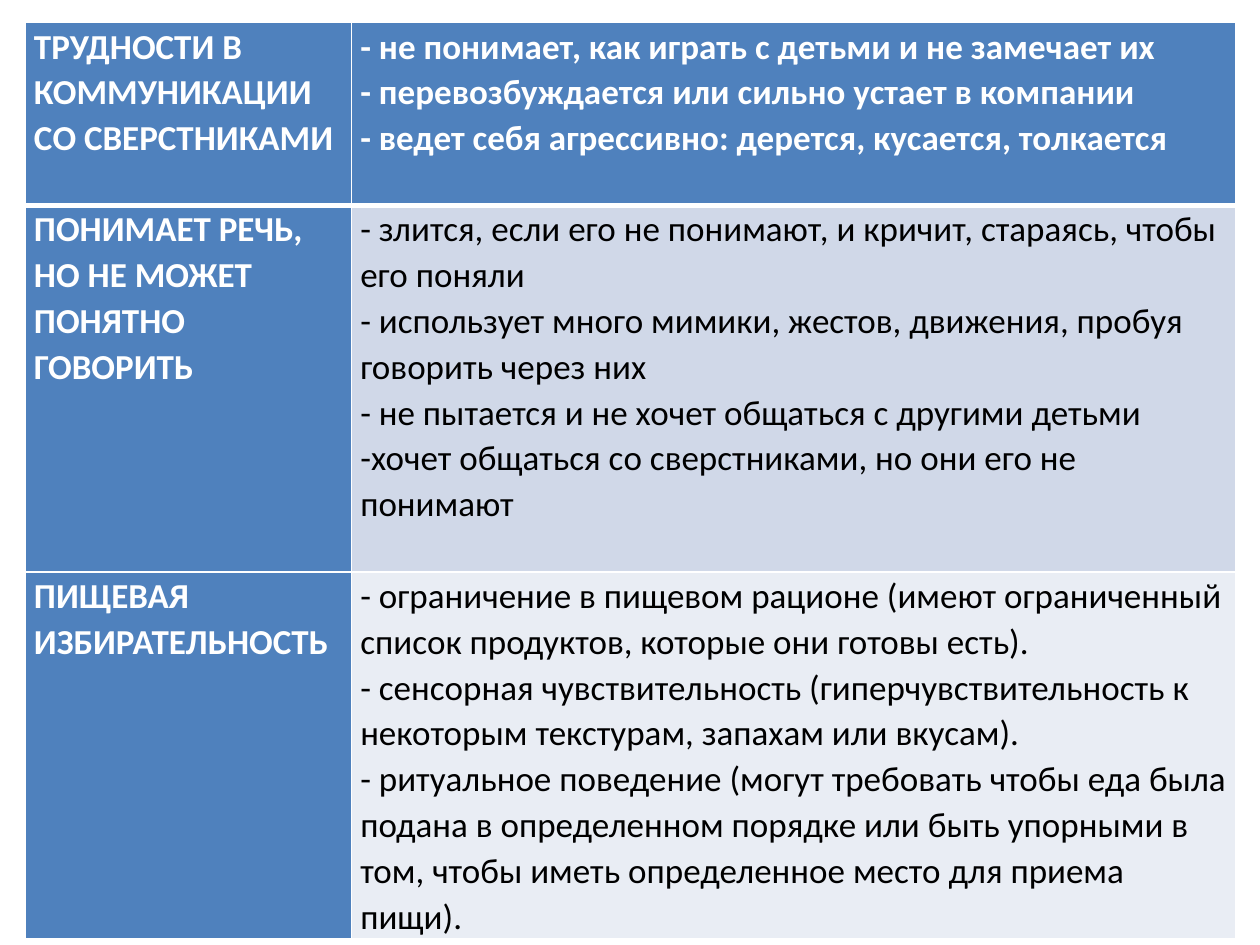
from dataclasses import dataclass

from lxml.etree import SubElement
from pptx import Presentation
from pptx.dml.color import RGBColor
from pptx.oxml.ns import qn
from pptx.util import Inches, Pt


@dataclass(frozen=True)
class Theme:
    font: str = "Calibri"
    size: float = 20
    line_spacing: float = 1.07
    heading_fill: str = "4F81BD"
    heading_text: str = "FFFFFF"
    body_text: str = "000000"
    band_fills: tuple = ("E9EDF4", "D0D8E8")
    border: str = "FFFFFF"
    thin: float = 1
    thick: float = 3


ROWS = [
    (
        1.45,
        "ТРУДНОСТИ В КОММУНИКАЦИИ СО СВЕРСТНИКАМИ",
        [
            "- не понимает, как играть с детьми и не замечает их",
            "- перевозбуждается или сильно устает в компании",
            "- ведет себя агрессивно: дерется, кусается, толкается",
        ],
    ),
    (
        2.91,
        "ПОНИМАЕТ РЕЧЬ, НО НЕ МОЖЕТ ПОНЯТНО ГОВОРИТЬ",
        [
            "- злится, если его не понимают, и кричит, стараясь, чтобы его поняли",
            "- использует много мимики, жестов, движения, пробуя говорить через них",
            "- не пытается и не хочет общаться с другими детьми",
            "-хочет общаться со сверстниками, но они его не понимают",
        ],
    ),
    (
        2.91,
        "ПИЩЕВАЯ ИЗБИРАТЕЛЬНОСТЬ",
        [
            "- ограничение в пищевом рационе (имеют ограниченный список продуктов, которые они готовы есть).",
            "- сенсорная чувствительность (гиперчувствительность к некоторым текстурам, запахам или вкусам).",
            "- ритуальное поведение (могут требовать чтобы еда была подана в определенном порядке или быть "
            "упорными в том, чтобы иметь определенное место для приема пищи).",
        ],
    ),
]
COLUMN_WIDTHS = (2.59, 7.02)


class SlideBuilder:
    def __init__(self, page, theme):
        self.page = page
        self.theme = theme

    def add_table(self, left, top, widths, rows):
        height = sum(row[0] for row in rows)
        frame = self.page.shapes.add_table(
            len(rows), len(widths), Inches(left), Inches(top),
            Inches(sum(widths)), Inches(height),
        )
        table = frame.table
        for column, width in zip(table.columns, widths):
            column.width = Inches(width)
        for index, (row_height, heading, signs) in enumerate(rows):
            table.rows[index].height = Inches(row_height)
            self.fill_cell(table.cell(index, 0), [heading], index, True)
            self.fill_cell(table.cell(index, 1), signs, index, index == 0)

    def fill_cell(self, cell, lines, row_index, is_heading):
        theme = self.theme
        cell.margin_left = cell.margin_right = Inches(0.07)
        cell.margin_top = cell.margin_bottom = 0
        self.set_borders(cell, row_index)
        fill = theme.heading_fill if is_heading else theme.band_fills[row_index % 2]
        cell.fill.solid()
        cell.fill.fore_color.rgb = RGBColor.from_string(fill)
        cell.text_frame.text = "\n".join(lines)
        color = theme.heading_text if is_heading else theme.body_text
        for para in cell.text_frame.paragraphs:
            para.line_spacing = theme.line_spacing
            for span in para.runs:
                span.font.name = theme.font
                span.font.size = Pt(theme.size)
                span.font.bold = is_heading
                span.font.color.rgb = RGBColor.from_string(color)

    def set_borders(self, cell, row_index):
        theme = self.theme
        properties = cell._tc.get_or_add_tcPr()
        thick_side = {0: "lnB", 1: "lnT"}.get(row_index)
        for side in ("lnL", "lnR", "lnT", "lnB"):
            width = theme.thick if side == thick_side else theme.thin
            line = SubElement(properties, qn(f"a:{side}"), w=str(Pt(width)))
            solid = SubElement(line, qn("a:solidFill"))
            SubElement(solid, qn("a:srgbClr"), val=theme.border)


def main():
    deck = Presentation()
    deck.slide_width = Inches(10)
    deck.slide_height = Inches(7.5)
    page = deck.slides.add_slide(deck.slide_layouts[6])
    builder = SlideBuilder(page, Theme())
    builder.add_table(0.2, 0.18, COLUMN_WIDTHS, ROWS)
    deck.save("out.pptx")


if __name__ == "__main__":
    main()
